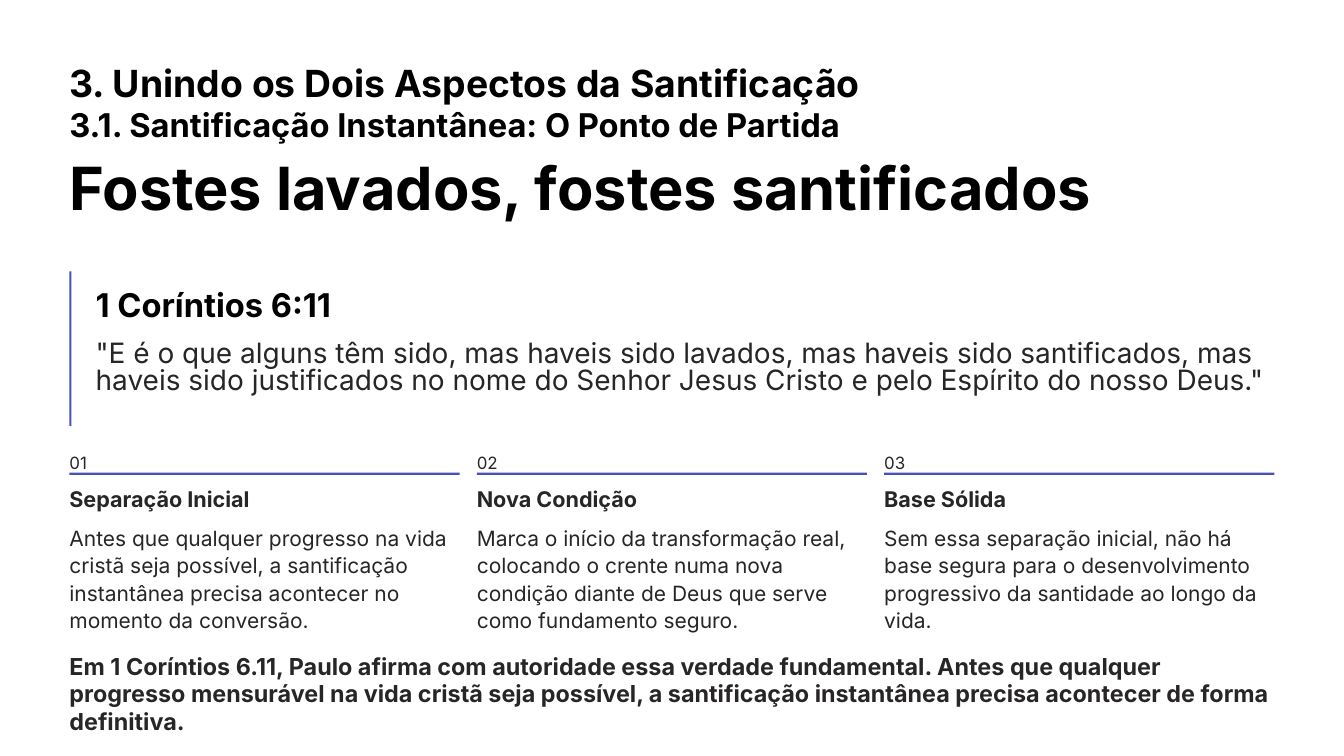
from pptx import Presentation
from pptx.dml.color import RGBColor
from pptx.enum.shapes import MSO_SHAPE
from pptx.util import Pt

WHITE, BLACK, INK, ACCENT = "FFFFFF", "000000", "272525", "4950BC"
SLIDE_WIDTH, SLIDE_HEIGHT = 1152, 648
LEFT = 59.5
QUOTE_LEFT = 82
COLUMN_STEP = 349.2
COLUMN_WIDTH = 334.4
RULE = 1.8

prs = Presentation()
prs.slide_width, prs.slide_height = Pt(SLIDE_WIDTH), Pt(SLIDE_HEIGHT)
slide = prs.slides.add_slide(prs.slide_layouts[6])


def add_text(text, left, top, width, height, *, size, spacing,
             color=INK, bold=False):
    box = slide.shapes.add_textbox(Pt(left), Pt(top), Pt(width), Pt(height))
    frame = box.text_frame
    frame.margin_left = frame.margin_top = 0
    frame.margin_right = frame.margin_bottom = 0
    frame.word_wrap = True
    paragraph = frame.paragraphs[0]
    paragraph.line_spacing = Pt(spacing)
    run = paragraph.add_run()
    run.text = text
    run.font.name = "Inter"
    run.font.size = Pt(size)
    run.font.bold = bold
    run.font.color.rgb = RGBColor.from_string(color)


def add_bar(left, top, width, height, color=ACCENT):
    bar = slide.shapes.add_shape(MSO_SHAPE.RECTANGLE, Pt(left), Pt(top),
                                 Pt(width), Pt(height))
    bar.shadow.inherit = False
    bar.fill.solid()
    bar.fill.fore_color.rgb = RGBColor.from_string(color)
    bar.line.fill.background()


# White ground
add_bar(0, 0, SLIDE_WIDTH, SLIDE_HEIGHT, WHITE)

# Headings
add_text("3. Unindo os Dois Aspectos da Santificação", LEFT, 52.8, 720, 37.5,
         size=32, spacing=37, color=BLACK, bold=True)
add_text("3.1. Santificação Instantânea: O Ponto de Partida", LEFT, 95.6, 720, 28,
         size=28, spacing=27.5, color=BLACK, bold=True)
add_text("Fostes lavados, fostes santificados", LEFT, 126.6, 900, 64,
         size=51, spacing=64, color=BLACK, bold=True)

# Bible quote
add_text("1 Coríntios 6:11", QUOTE_LEFT, 254.8, 222.5, 23,
         size=28, spacing=23, color=BLACK, bold=True)
add_text('"E é o que alguns têm sido, mas haveis sido lavados, mas haveis sido '
         "santificados, mas haveis sido justificados no nome do Senhor Jesus "
         'Cristo e pelo Espírito do nosso Deus."', QUOTE_LEFT, 292.7, 1011, 47.5,
         size=24, spacing=23.5)
add_bar(LEFT, 232.6, RULE, 132.5)

# Three numbered points
points = [
    ("Separação Inicial",
     "Antes que qualquer progresso na vida cristã seja possível, a santificação "
     "instantânea precisa acontecer no momento da conversão."),
    ("Nova Condição",
     "Marca o início da transformação real, colocando o crente numa nova "
     "condição diante de Deus que serve como fundamento seguro."),
    ("Base Sólida",
     "Sem essa separação inicial, não há base segura para o desenvolvimento "
     "progressivo da santidade ao longo da vida."),
]
for index, (heading, body) in enumerate(points):
    left = LEFT + index * COLUMN_STEP
    add_text(f"{index + 1:02}", left, 381.6, 24, 19, size=14.5, spacing=23.5)
    add_bar(left, 405.2, COLUMN_WIDTH, RULE)
    add_text(heading, left, 415.9, 186, 23, size=18.5, spacing=23, bold=True)
    add_text(body, left, 448.6, COLUMN_WIDTH, 94, size=18, spacing=23.5)

# Conclusion
add_text("Em 1 Coríntios 6.11, Paulo afirma com autoridade essa verdade "
         "fundamental. Antes que qualquer progresso mensurável na vida cristã "
         "seja possível, a santificação instantânea precisa acontecer de forma "
         "definitiva.", LEFT, 559.4, 1033, 70.5,
         size=20, spacing=23.5, bold=True)

prs.save("out.pptx")
